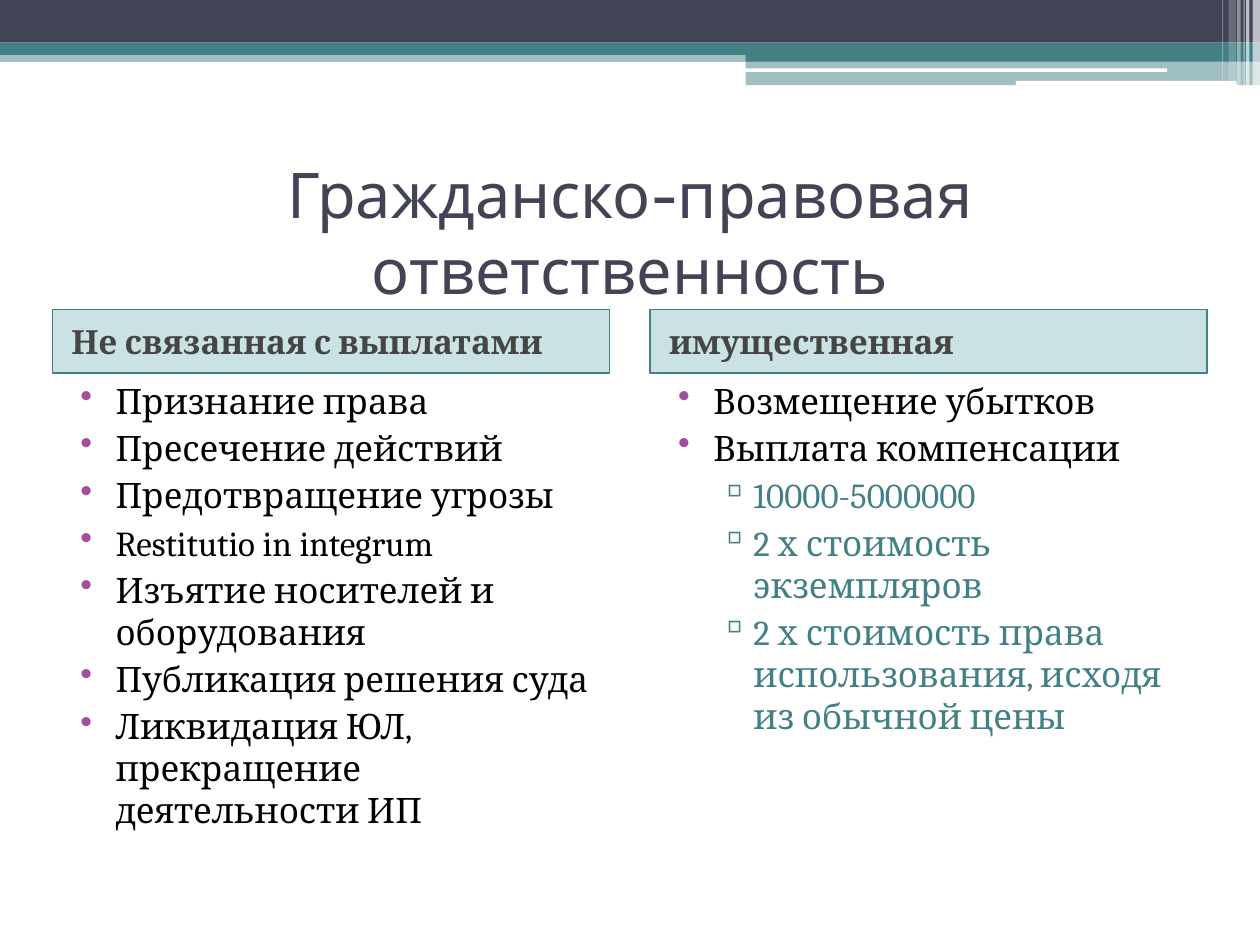
from lxml import etree
from pptx import Presentation
from pptx.dml.color import RGBColor
from pptx.enum import shapes, text
from pptx.oxml import ns
from pptx.util import Cm, Pt

WHITE = RGBColor(0xFF, 0xFF, 0xFF)
BLACK = RGBColor(0, 0, 0)
NAVY = RGBColor(0x42, 0x44, 0x56)
TEAL = RGBColor(0x43, 0x80, 0x86)
AQUA = RGBColor(0x32, 0x8E, 0x97)
GREY = RGBColor(0x45, 0x45, 0x45)
PLUM = RGBColor(0xA0, 0x4D, 0xA3)
RECT = shapes.MSO_SHAPE.RECTANGLE
ROUND = shapes.MSO_SHAPE.ROUNDED_RECTANGLE


def add_box(kind, left, top, width, height, color, alpha=100):
    box = slide.shapes.add_shape(kind, Cm(left), Cm(top), Cm(width), Cm(height))
    box.shadow.inherit = False
    box.line.fill.background()
    box.fill.solid()
    box.fill.fore_color.rgb = color
    if alpha < 100:
        tone = box.fill._xPr.find(".//" + ns.qn("a:srgbClr"))
        etree.SubElement(tone, ns.qn("a:alpha"), val=str(alpha * 1000))
    return box


def indent(para, left, hang=0, mark=None, color=None):
    props = para._p.get_or_add_pPr()
    props.set("marL", str(Cm(left)))
    props.set("indent", str(Cm(-hang)))
    para.space_before = Pt(3)
    para.alignment = text.PP_ALIGN.LEFT
    if mark:
        tint = etree.SubElement(props, ns.qn("a:buClr"))
        etree.SubElement(tint, ns.qn("a:srgbClr"), val=str(color))
        etree.SubElement(props, ns.qn("a:buChar"), char=mark)


deck = Presentation()
deck.slide_width, deck.slide_height = Cm(25.4), Cm(19.05)
slide = deck.slides.add_slide(deck.slide_layouts[5])

bands = [
    (RECT, 0, 1.02, 25.4, 0.23, TEAL, 50),
    (RECT, 0, 0, 25.4, 0.86, NAVY, 100),
    (RECT, 0, 0.86, 25.4, 0.25, TEAL, 100),
    (RECT, 15.03, 0.99, 10.37, 0.25, TEAL, 100),
    (RECT, 15.03, 1.23, 10.37, 0.49, TEAL, 50),
    (ROUND, 15.02, 1.38, 8.51, 0.07, WHITE, 100),
    (ROUND, 20.48, 1.63, 4.45, 0.1, WHITE, 100),
]
for band in bands:
    add_box(*band)

stripes = [
    (25.25, 0.15, 1.72, 65),
    (25.12, 0.07, 1.72, 65),
    (25.07, 0.02, 1.72, 60),
    (24.94, 0.07, 1.72, 40),
    (24.77, 0.15, 1.63, 20),
    (24.64, 0.02, 1.63, 30),
]
for left, width, height, alpha in stripes:
    add_box(RECT, left, 0, width, height, WHITE, alpha)

title = slide.shapes.title
title.left, title.top, title.width, title.height = Cm(1.06), Cm(3.18), Cm(23.28), Cm(2.96)
frame = title.text_frame
frame.text = "Гражданско-правовая ответственность"
frame.auto_size = text.MSO_AUTO_SIZE.NONE
frame.vertical_anchor = text.MSO_ANCHOR.MIDDLE
para = frame.paragraphs[0]
para.alignment = text.PP_ALIGN.CENTER
para.font.name, para.font.size = "Cabin", Pt(36)
para.font.color.rgb = NAVY

columns = [
    (1.06, "Не связанная с выплатами", [
        (0, "Признание права"),
        (0, "Пресечение действий"),
        (0, "Предотвращение угрозы"),
        (0, "Restitutio in integrum"),
        (0, "Изъятие носителей и оборудования"),
        (0, "Публикация решения суда"),
        (0, "Ликвидация ЮЛ, прекращение деятельности ИП"),
    ]),
    (13.11, "имущественная", [
        (0, "Возмещение убытков"),
        (0, "Выплата компенсации"),
        (1, "10000-5000000"),
        (1, "2 х стоимость экземпляров"),
        (1, "2 х стоимость права использования, исходя из обычной цены"),
    ]),
]
styles = [(1.02, 0.71, "•", PLUM), (1.83, 0.69, "▫", TEAL)]
inks = [BLACK, TEAL]

for left, name, items in columns:
    head = add_box(RECT, left, 6.24, 11.23, 1.28, AQUA, 25)
    head.line.color.rgb = TEAL
    head.line.width = Pt(1)
    frame = head.text_frame
    frame.text = name
    frame.vertical_anchor = text.MSO_ANCHOR.MIDDLE
    para = frame.paragraphs[0]
    indent(para, 0.13)
    para.font.name, para.font.size, para.font.bold = "Cambria", Pt(19), True
    para.font.color.rgb = GREY

    body = slide.shapes.add_textbox(Cm(left), Cm(7.52), Cm(11.23), Cm(10.8))
    frame = body.text_frame
    frame.word_wrap = True
    for i, (level, item) in enumerate(items):
        para = frame.add_paragraph() if i else frame.paragraphs[0]
        para.text = item
        para.level = level
        indent(para, *styles[level])
        para.font.name, para.font.size = "Cambria", Pt(20)
        para.font.color.rgb = inks[level]

deck.save("out.pptx")
